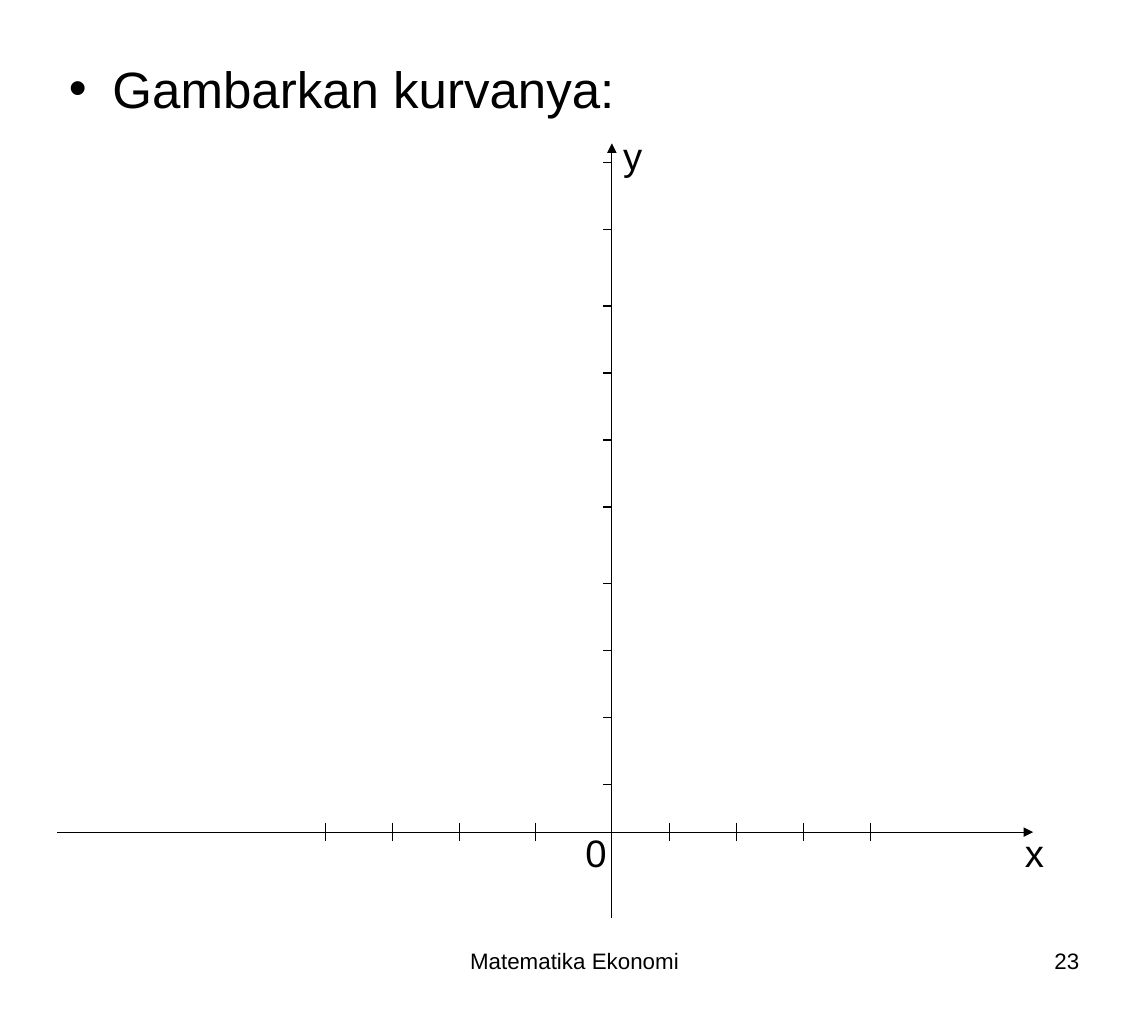
from itertools import chain

from lxml.etree import SubElement
from pptx import Presentation
from pptx.dml.color import RGBColor
from pptx.enum.shapes import MSO_CONNECTOR as Connector
from pptx.enum.text import MSO_ANCHOR as Anchor, MSO_AUTO_SIZE as AutoSize, PP_ALIGN as Align
from pptx.oxml.ns import qn
from pptx.util import Inches, Pt

COLOURS = {"ink": "000000", "background": "FFFFFF"}
FONT = "Arial"
AXIS_X, AXIS_Y = 5.33, 7.25
GRID = 12  # tick positions are counted in twelfths of an inch
X_TICKS = chain(range(34, 49, 7), [56], range(70, 92, 7))
Y_TICKS = chain(range(17, 25, 7), range(32, 54, 7), range(61, 83, 7))


class SlideBuilder:
    def __init__(self, presentation):
        self.slide = presentation.slides.add_slide(presentation.slide_layouts[1])
        background = self.slide.background.fill
        background.solid()
        background.fore_color.rgb = RGBColor.from_string(COLOURS["background"])
        title = self.slide.shapes.title
        title.element.getparent().remove(title.element)

    def set_text(self, shape, text, size, align=Align.LEFT):
        frame = shape.text_frame
        frame.text = text
        frame.word_wrap = True
        frame.auto_size = AutoSize.NONE
        frame.vertical_anchor = Anchor.TOP
        paragraph = frame.paragraphs[0]
        paragraph.alignment = align
        paragraph.space_before = Pt(0)
        font = paragraph.runs[0].font
        font.name, font.size = FONT, Pt(size)
        font.color.rgb = RGBColor.from_string(COLOURS["ink"])
        return paragraph

    def bullet(self, text, left, top, width, height, size=32):
        body = self.slide.placeholders[1]
        body.left, body.top = Inches(left), Inches(top)
        body.width, body.height = Inches(width), Inches(height)
        properties = self.set_text(body, text, size)._p.get_or_add_pPr()
        properties.set("marL", str(Inches(0.38)))
        properties.set("indent", str(-Inches(0.38)))
        SubElement(properties, qn("a:buChar")).set("char", "•")

    def label(self, text, left, top, width=0.5, height=0.5, size=24, align=Align.LEFT):
        box = self.slide.shapes.add_textbox(
            Inches(left), Inches(top), Inches(width), Inches(height))
        self.set_text(box, text, size, align)

    def line(self, start, end, arrow=False):
        points = [Inches(value) for value in (*start, *end)]
        connector = self.slide.shapes.add_connector(Connector.STRAIGHT, *points)
        connector.line.color.rgb = RGBColor.from_string(COLOURS["ink"])
        connector.line.width = Pt(0.75)
        properties = connector._element.spPr
        if arrow:
            SubElement(properties.find(qn("a:ln")), qn("a:tailEnd")).set("type", "triangle")
        SubElement(properties, qn("a:effectLst"))


def main():
    presentation = Presentation()
    presentation.slide_width, presentation.slide_height = Inches(10), Inches(9)
    builder = SlideBuilder(presentation)

    builder.bullet("Gambarkan kurvanya:", 0.5, 0.45, 9, 0.75)

    builder.line((AXIS_X, 8), (AXIS_X, 1.25), arrow=True)
    builder.line((0.5, AXIS_Y), (9, AXIS_Y), arrow=True)
    for tick in X_TICKS:
        builder.line((tick / GRID, AXIS_Y - 0.08), (tick / GRID, AXIS_Y + 0.08))
    for tick in Y_TICKS:
        builder.line((AXIS_X, tick / GRID), (AXIS_X - 0.08, tick / GRID))

    for text, left, top in (("0", 5, 7.18), ("x", 8.83, 7.18), ("y", AXIS_X, 1.1)):
        builder.label(text, left, top)

    builder.label("Matematika Ekonomi", 3.42, 8.2, 3.17, 0.62, 14, Align.CENTER)
    builder.label("23", 7.17, 8.2, 2.33, 0.62, 14, Align.RIGHT)

    presentation.save("out.pptx")


if __name__ == "__main__":
    main()
